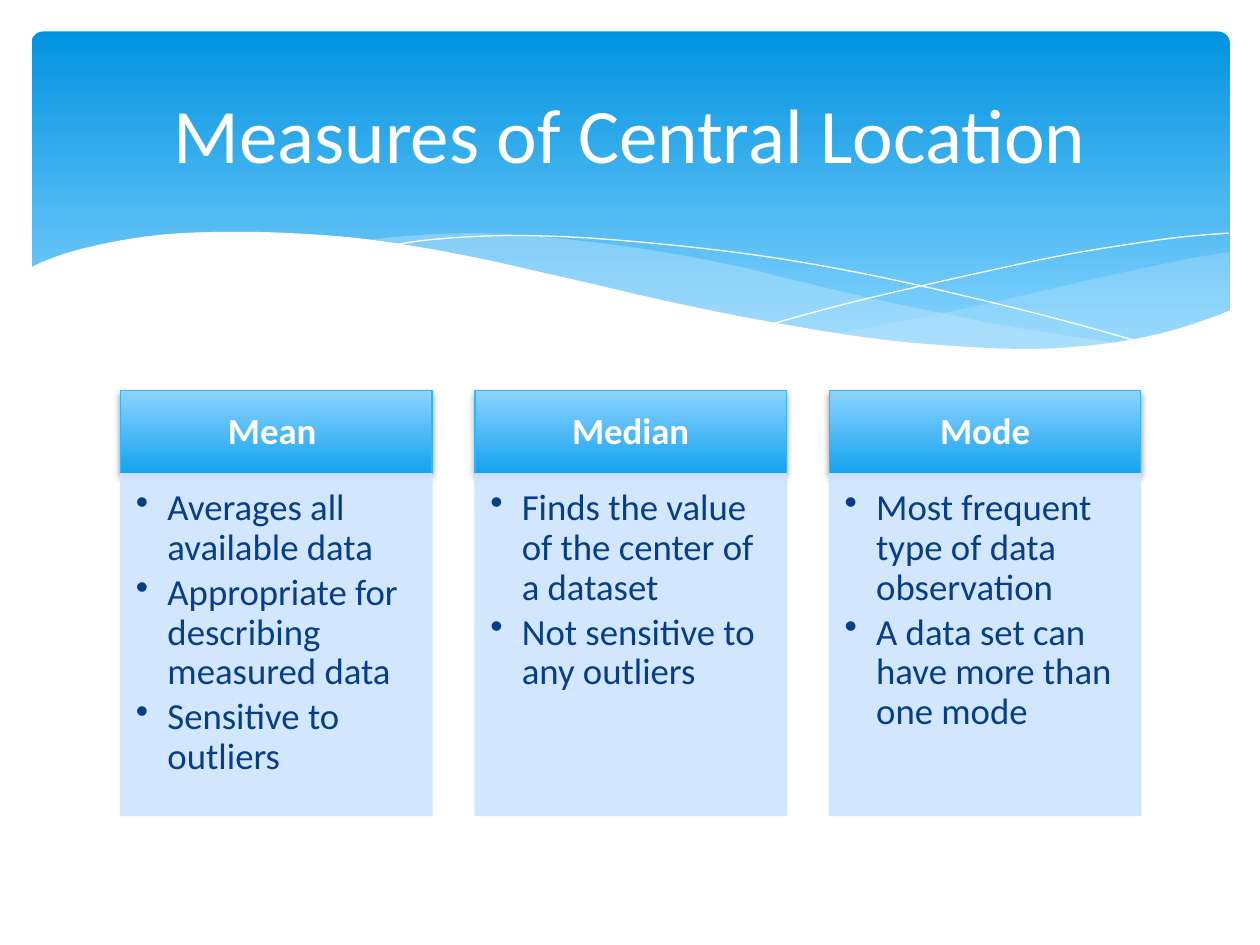
from pptx import Presentation
from pptx import util as u
from pptx.dml.color import RGBColor
from pptx.enum import shapes, text
from pptx.oxml import parse_xml
from pptx.oxml.ns import nsdecls, qn
from pptx.oxml.xmlchemy import OxmlElement

Pt = u.Pt
WHITE = RGBColor(0xFF, 0xFF, 0xFF)
NAVY = RGBColor(0x07, 0x3E, 0x87)
HEAD_LINE = RGBColor(0x31, 0xB6, 0xFD)
PALE = RGBColor(0xCE, 0xE5, 0xFE)
MIST = RGBColor(0xC6, 0xE7, 0xFC)
BANNER_STOPS = [(0, RGBColor(0x02, 0x93, 0xE0)), (0.9, RGBColor(0x83, 0xD3, 0xFE))]
HEAD_STOPS = [(0, RGBColor(0x8C, 0xD3, 0xFF)), (1, RGBColor(0x14, 0xA2, 0xEF))]

# Content
TITLE = "Measures of Central Location"
COLUMNS = [
    ("Mean ", ["Averages all available data",
               "Appropriate for describing measured data",
               "Sensitive to outliers"]),
    ("Median", ["Finds the value of the center of a dataset",
                "Not sensitive to any outliers"]),
    ("Mode", ["Most frequent type of data observation",
              "A data set can have more than one mode"]),
]

# Waves: each is a list of smooth curves joined end to end, with fill and opacity
BANDS = [
    ([[(702.7, 144), (673.2, 149), (619.9, 160.6), (560.9, 174.2), (508.3, 185),
       (475.9, 190.8)],
      [(475.9, 190.8), (527, 197.3), (578.2, 200.2), (627.8, 197.3), (668.2, 189.4),
       (702.7, 177.8)]], MIST, 29),
    ([[(205.9, 137.5), (236.2, 134.6), (273.6, 133.2), (318.2, 136.1), (370.1, 142.6),
       (420.5, 151.9), (452.9, 159.8), (508.3, 172.8), (581, 187.2), (643, 196.6)],
      [(643, 196.6), (603.4, 200.2), (565.2, 200.2), (510.5, 195.8), (456.5, 187.9),
       (381.6, 172.8), (323.3, 159.8), (260.6, 146.2), (205.9, 137.5)]], MIST, 40),
]
THREADS = [
    [(222.5, 140.4), (247.7, 136.8), (288.7, 134.6), (337.7, 136.1), (400.3, 141.8),
     (457.9, 149.8), (523.4, 162.7), (598.3, 180.7), (653, 195.8)],
    [(441.4, 185), (483.8, 173.5), (538.6, 160.6), (601.9, 146.9), (644.4, 139.7),
     (675.4, 135.4), (702, 133.2)],
]
FRONT = ([[(16.6, 153.4), (25.9, 149), (42.5, 143.3), (68.4, 137.5), (95, 133.9),
           (127.4, 132.5), (165.6, 133.2), (210.2, 136.8), (262.8, 145.4),
           (321.8, 158.4), (380.9, 172.1), (434.2, 182.9), (495.4, 193),
           (547.9, 198), (592.6, 199.4), (630, 196.6), (662.4, 190.8),
           (690.5, 182.2), (703.4, 177.1)],
          [(703.4, 236.9), (16.6, 236.9)]], WHITE, 100)

# Column grid
LEFT, TOP, WIDTH, PITCH = 68.9, 223.2, 178, 202.5
HEAD_HEIGHT, BODY_HEIGHT = 47.5, 195.3

HEAD_FONT = {"size": Pt(21), "name": "Calibri", "bold": True}
BODY_FONT = {"size": Pt(21), "name": "Calibri", "bold": False}
TITLE_FONT = {"size": Pt(44), "name": "Calibri", "bold": False}


def smooth(knots, steps=4):
    """Points of a Catmull-Rom curve through the knots."""
    padded = [knots[0], *knots, knots[-1]]
    points = [knots[0]]
    for a, b, c, d in zip(padded, padded[1:], padded[2:], padded[3:]):
        for step in range(1, steps + 1):
            t = step / steps
            points.append(tuple(
                (2 * q + (r - p) * t + (2 * p - 5 * q + 4 * r - s) * t ** 2
                 + (3 * q - p - 3 * r + s) * t ** 3) / 2
                for p, q, r, s in zip(a, b, c, d)))
    return points


def add_curve(page, curves, closed):
    points = [(Pt(x), Pt(y)) for knots in curves for x, y in smooth(knots)]
    builder = page.shapes.build_freeform(*points[0], scale=1.0)
    builder.add_line_segments(points[1:], close=closed)
    shape = builder.convert_to_shape()
    shape.shadow.inherit = False
    return shape


def add_band(page, curves, color, opacity):
    shape = add_curve(page, curves, True)
    shape.fill.solid()
    shape.fill.fore_color.rgb = color
    shape.line.fill.background()
    set_opacity(shape, opacity)


def add_block(page, kind, left, top, width, height):
    shape = page.shapes.add_shape(kind, Pt(left), Pt(top), Pt(width), Pt(height))
    shape.shadow.inherit = False
    return shape


def set_opacity(shape, percent):
    if percent < 100:
        for color in shape.element.spPr.iter(qn("a:srgbClr")):
            alpha = OxmlElement("a:alpha")
            alpha.set("val", str(percent * 1000))
            color.append(alpha)


def set_gradient(shape, stops):
    shape.fill.gradient()
    shape.fill.gradient_angle = 270
    for stop, (position, color) in zip(shape.fill.gradient_stops, stops):
        stop.position = position
        stop.color.rgb = color


def set_line(shape, color, width):
    shape.line.color.rgb = color
    shape.line.width = Pt(width)


def add_shadow(shape):
    shape.element.spPr.find(qn("a:effectLst")).append(parse_xml(
        f'<a:outerShdw {nsdecls("a")} blurRad="50800" dist="25400" dir="5400000" '
        'rotWithShape="0"><a:srgbClr val="000000"><a:alpha val="38000"/>'
        '</a:srgbClr></a:outerShdw>'))


def write(shape, lines, font, color, align, anchor, insets, spacing=1.0, bullets=False):
    frame = shape.text_frame
    frame.word_wrap = True
    frame.vertical_anchor = anchor
    for side, inset in zip(("left", "top", "right", "bottom"), insets):
        setattr(frame, f"margin_{side}", Pt(inset))
    for index, line in enumerate(lines):
        para = frame.add_paragraph() if index else frame.paragraphs[0]
        para.alignment = align
        para.line_spacing = spacing
        span = para.add_run()
        span.text = line
        span.font.color.rgb = color
        for name, value in font.items():
            setattr(span.font, name, value)
        if bullets:
            para.space_after = Pt(3)
            props = para._p.get_or_add_pPr()
            props.set("marL", str(Pt(18)))
            props.set("indent", str(-Pt(18)))
            bullet = OxmlElement("a:buChar")
            bullet.set("char", "•")
            props.append(bullet)


def main():
    deck = Presentation()
    deck.slide_width, deck.slide_height = Pt(720), Pt(540)
    page = deck.slides.add_slide(deck.slide_layouts[6])
    kinds, aligns, anchors = shapes.MSO_SHAPE, text.PP_ALIGN, text.MSO_ANCHOR

    # Banner with waves
    banner = add_block(page, kinds.ROUNDED_RECTANGLE, 18, 18, 684.7, 194.4)
    banner.adjustments[0] = 0.034
    set_gradient(banner, BANNER_STOPS)
    banner.line.fill.background()
    for band in BANDS:
        add_band(page, *band)
    for knots in THREADS:
        thread = add_curve(page, [knots], False)
        thread.fill.background()
        set_line(thread, WHITE, 0)
    add_band(page, *FRONT)

    # Title
    box = page.shapes.add_textbox(Pt(36), Pt(26.6), Pt(648), Pt(98.6))
    write(box, [TITLE], TITLE_FONT, WHITE, aligns.CENTER, anchors.MIDDLE,
          (7.2, 3.6, 7.2, 3.6))

    # Columns: heading above bulleted body
    for index, (heading, points) in enumerate(COLUMNS):
        left = LEFT + index * PITCH
        head = add_block(page, kinds.RECTANGLE, left, TOP, WIDTH, HEAD_HEIGHT)
        set_gradient(head, HEAD_STOPS)
        set_line(head, HEAD_LINE, 0.75)
        add_shadow(head)
        write(head, [heading], HEAD_FONT, WHITE, aligns.CENTER, anchors.MIDDLE,
              (11.5, 6.5, 11.5, 6.5), 0.9)

        body = add_block(page, kinds.RECTANGLE, left, TOP + HEAD_HEIGHT, WIDTH, BODY_HEIGHT)
        body.fill.solid()
        body.fill.fore_color.rgb = PALE
        set_line(body, PALE, 0.75)
        set_opacity(body, 90)
        write(body, points, BODY_FONT, NAVY, aligns.LEFT, anchors.TOP,
              (8.8, 8.8, 11.5, 13), 0.9, bullets=True)

    deck.save("out.pptx")


if __name__ == "__main__":
    main()
